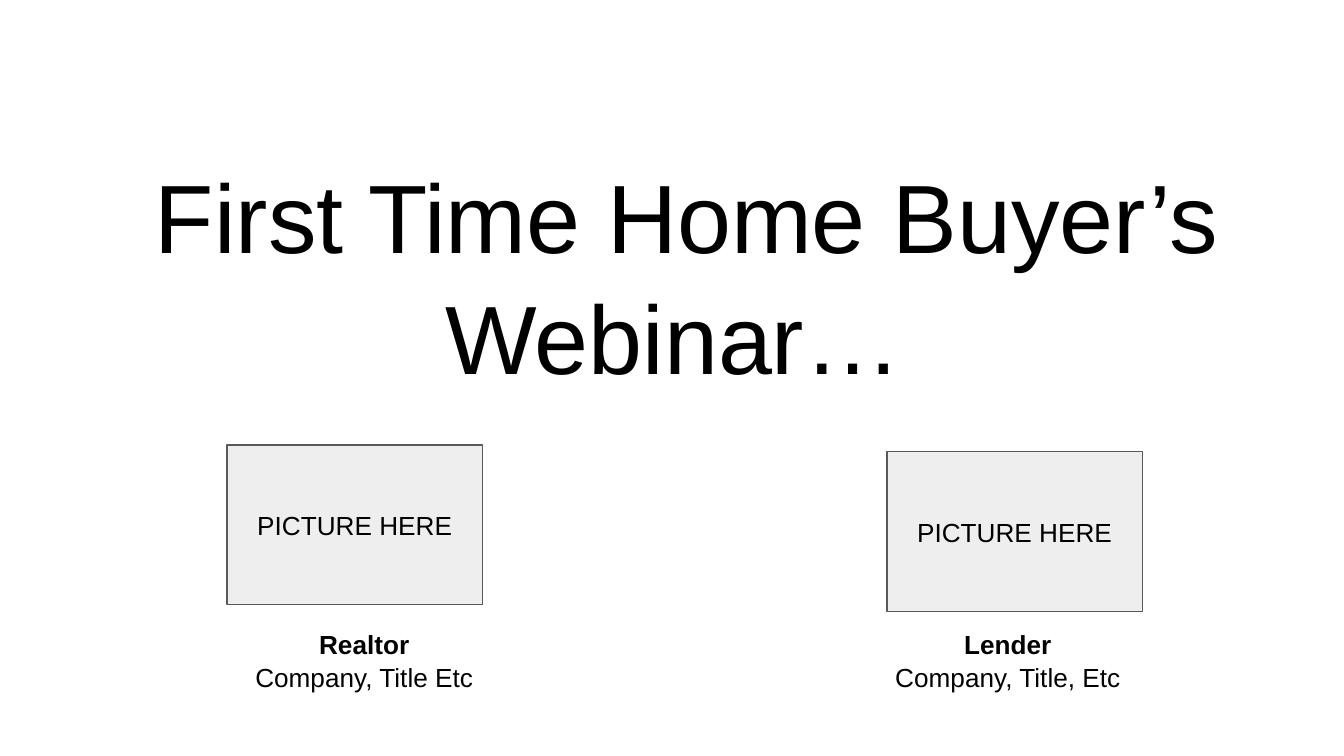
from pptx import Presentation
from pptx.dml.color import RGBColor
from pptx.enum.shapes import MSO_SHAPE
from pptx.enum.text import MSO_ANCHOR, MSO_AUTO_SIZE, PP_ALIGN
from pptx.util import Pt

BLACK = RGBColor(0x00, 0x00, 0x00)
PANEL_GREY = RGBColor(0xEE, 0xEE, 0xEE)
BORDER_GREY = RGBColor(0x59, 0x59, 0x59)
CENTER = PP_ALIGN.CENTER
TOP, MIDDLE, BOTTOM = MSO_ANCHOR.TOP, MSO_ANCHOR.MIDDLE, MSO_ANCHOR.BOTTOM
NO_AUTOFIT = MSO_AUTO_SIZE.NONE
RECTANGLE = MSO_SHAPE.RECTANGLE

INSET = Pt(7.2)
PICTURE_SIZE = Pt(136.8), Pt(85.7)


def points(*lengths):
    return [Pt(length) for length in lengths]


def write_lines(frame, lines, anchor, size, spacing=1.0):
    """Fill a text frame with centred (text, bold) lines."""
    frame_format = {
        "word_wrap": True, "auto_size": NO_AUTOFIT, "vertical_anchor": anchor,
        "margin_left": INSET, "margin_right": INSET,
        "margin_top": INSET, "margin_bottom": INSET,
    }
    for name, value in frame_format.items():
        setattr(frame, name, value)
    for index, (text, bold) in enumerate(lines):
        line = frame.paragraphs[0] if index == 0 else frame.add_paragraph()
        line.alignment = CENTER
        line.line_spacing = spacing
        run = line.add_run()
        run.text = text
        font_format = {"name": "Arial", "size": Pt(size), "bold": bold}
        for name, value in font_format.items():
            setattr(run.font, name, value)
        run.font.color.rgb = BLACK


def place_title(slide, box):
    title = slide.shapes.title
    title.left, title.top, title.width, title.height = box
    # The closing space shifts the last line slightly left of centre
    write_lines(title.text_frame, [("First Time Home Buyer’s Webinar… ", False)],
                BOTTOM, 52, 1.04)


def place_presenter(slide, picture_corner, caption_box, role, details):
    # Role and details below the picture
    caption = slide.shapes.add_textbox(*caption_box)
    write_lines(caption.text_frame, [(role, True), (details, False)], TOP, 14, 1.06)

    # Framed space for the picture
    picture = slide.shapes.add_shape(RECTANGLE, *picture_corner, *PICTURE_SIZE)
    picture.shadow.inherit = False
    picture.fill.solid()
    picture.fill.fore_color.rgb = PANEL_GREY
    picture.line.color.rgb = BORDER_GREY
    picture.line.width = Pt(0.75)
    write_lines(picture.text_frame, [("PICTURE HERE", False)], MIDDLE, 14)


def main():
    presentation = Presentation()
    presentation.slide_width, presentation.slide_height = points(720, 405)
    slide = presentation.slides.add_slide(presentation.slide_layouts[5])

    place_title(slide, points(32.4, 116.6, 671, 101.5))
    place_presenter(slide, points(475.2, 242), points(451.4, 328.3, 177.1, 41),
                    "Lender", "Company, Title, Etc")
    place_presenter(slide, points(121.7, 238.3), points(88.6, 328.3, 213.1, 31.7),
                    "Realtor", "Company, Title Etc")

    presentation.save("out.pptx")


if __name__ == "__main__":
    main()
